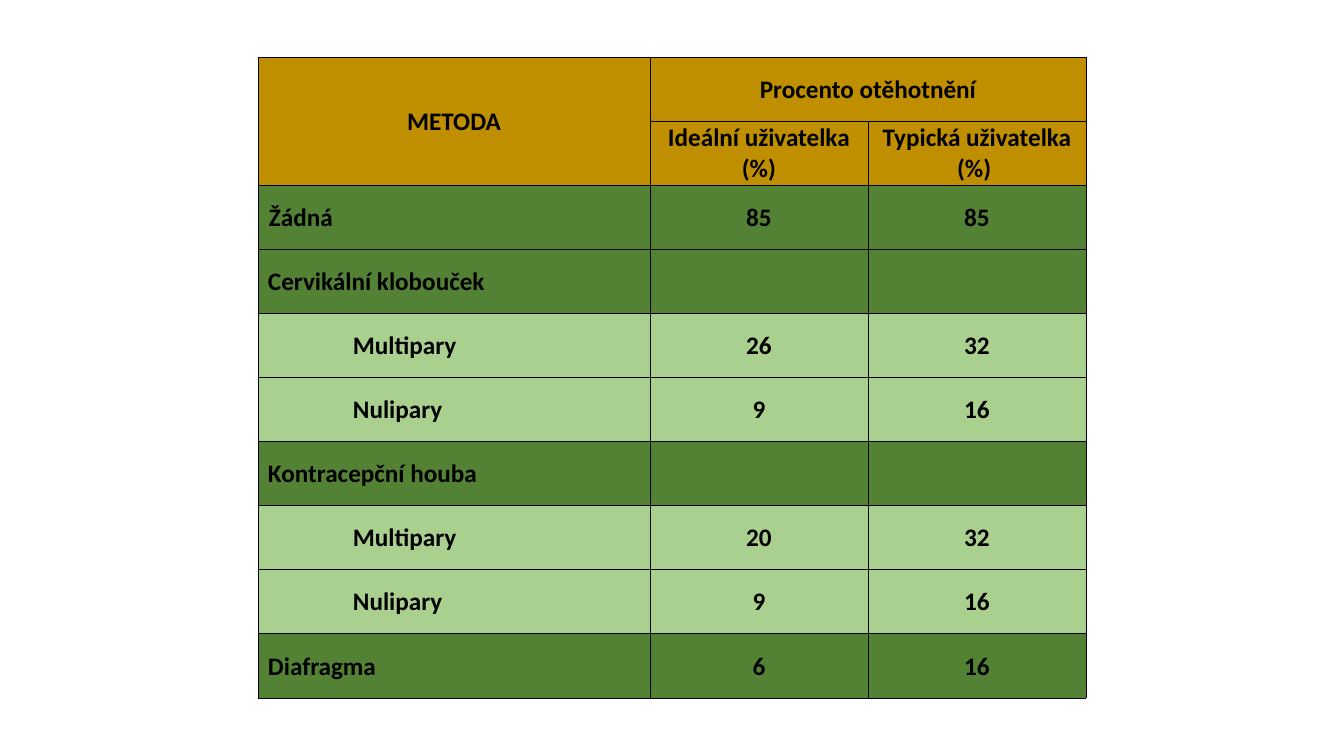
import pptx
import pptx.dml.color
import pptx.enum.text
import pptx.oxml.ns
import pptx.util
from lxml import etree

RGB = pptx.dml.color.RGBColor
ALIGN = pptx.enum.text.PP_ALIGN
MID = pptx.enum.text.MSO_ANCHOR.MIDDLE

GOLD = RGB(0xBF, 0x8F, 0x00)
GREEN = RGB(0x54, 0x82, 0x35)
LIGHT = RGB(0xA9, 0xD0, 0x8E)
BLACK = RGB(0, 0, 0)

SCALE = 914400 / 100.8
FONT = "Calibri"
COLS = (392, 218, 218)
EDGE = 1  # inset of centred cells
MAIN, SUB = 10, 95  # left inset of methods and their groups

HEADS = [
    ("METODA", "Procento otěhotnění", ""),
    ("", "Ideální uživatelka (%)", "Typická uživatelka (%) "),
]
# Left inset, method, ideal user, typical user
METHODS = [
    (MAIN + 1, "Žádná", "85", "85"),
    (MAIN, "Cervikální klobouček", "", ""),
    (SUB, "Multipary", "26", "32"),
    (SUB, "Nulipary", "9", "16"),
    (MAIN, "Kontracepční houba", "", ""),
    (SUB, "Multipary", "20", "32"),
    (SUB, "Nulipary", "9", "16"),
    (MAIN, "Diafragma", "6", "16"),
]


def px(n):
    return pptx.util.Emu(round(n * SCALE))


def frame(cell):
    """Thin black line on all four sides."""
    qn = pptx.oxml.ns.qn
    props = cell._tc.get_or_add_tcPr()
    for side in "LRTB":
        line = etree.SubElement(props, qn("a:ln" + side), w=str(pptx.util.Pt(0.5)))
        fill = etree.SubElement(line, qn("a:solidFill"))
        etree.SubElement(fill, qn("a:srgbClr"), val=str(BLACK))


def style(cell, text, color, align=ALIGN.CENTER, left=EDGE):
    frame(cell)
    cell.fill.solid()
    cell.fill.fore_color.rgb = color
    cell.vertical_anchor = MID
    cell.margin_left = px(left)
    cell.margin_right = cell.margin_top = px(EDGE)
    cell.margin_bottom = 0
    cell.text_frame.text = text
    para = cell.text_frame.paragraphs[0]
    para.alignment = align
    for run in para.runs:
        run.font.name = FONT
        run.font.size = pptx.util.Pt(18)
        run.font.bold = True
        run.font.color.rgb = BLACK


def add_grid(slide, left, top, width, height):
    count = len(HEADS) + len(METHODS)
    shape = slide.shapes.add_table(
        count, len(COLS), px(left), px(top), px(width), px(height))
    grid = shape.table
    grid.first_row = grid.horz_banding = False
    for col, size in zip(grid.columns, COLS):
        col.width = px(size * width / sum(COLS))
    for row in grid.rows:
        row.height = px(height / count)

    # Heading rows
    for r, texts in enumerate(HEADS):
        for c, text in enumerate(texts):
            style(grid.cell(r, c), text, GOLD)
    grid.cell(0, 0).merge(grid.cell(1, 0))
    grid.cell(0, 1).merge(grid.cell(0, 2))

    # Method rows
    for r, (inset, name, *rates) in enumerate(METHODS, len(HEADS)):
        color = LIGHT if inset == SUB else GREEN
        style(grid.cell(r, 0), name, color, ALIGN.LEFT, inset)
        for c, rate in enumerate(rates, 1):
            style(grid.cell(r, c), rate, color)


def main():
    deck = pptx.Presentation()
    deck.slide_width, deck.slide_height = px(1344), px(756)
    slide = deck.slides.add_slide(deck.slide_layouts[6])
    add_grid(slide, 258, 57, 828, 641)
    deck.save("out.pptx")


if __name__ == "__main__":
    main()
